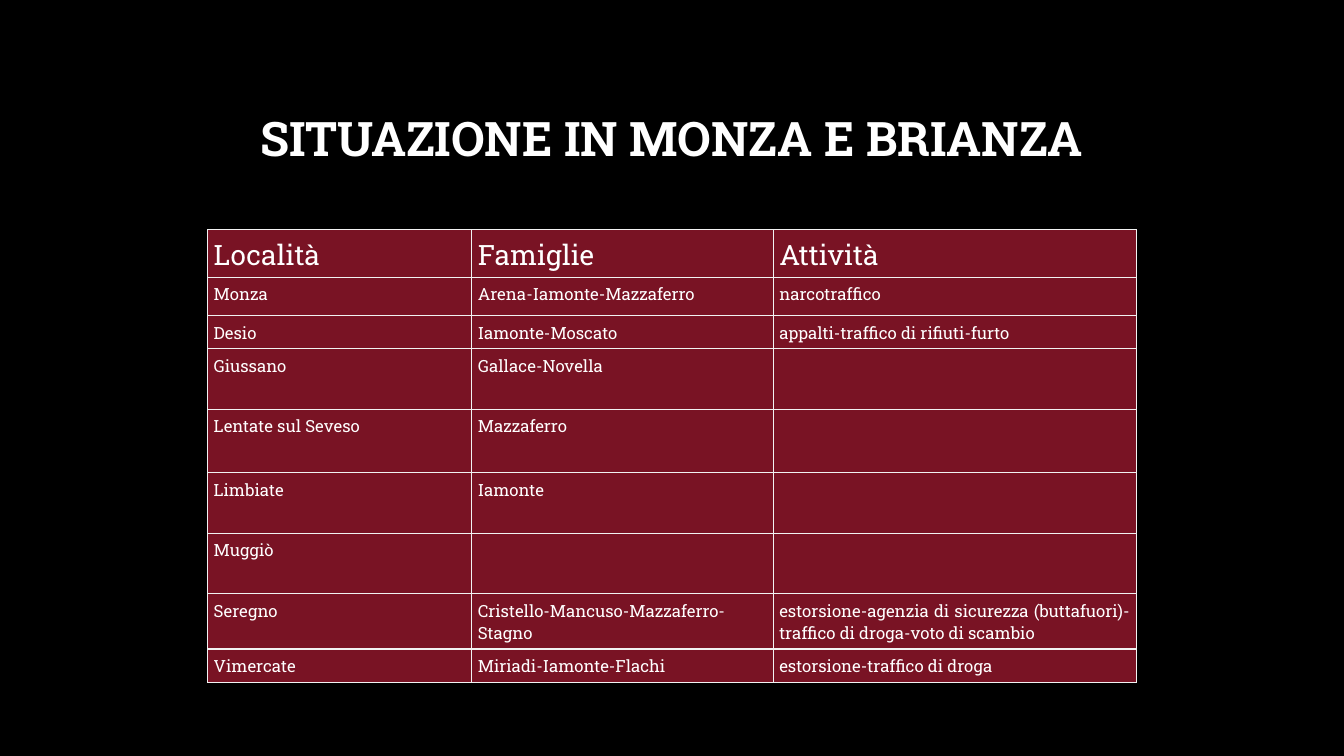
from lxml import etree
from pptx import Presentation
from pptx import util as u
from pptx.dml.color import RGBColor
from pptx.enum import text
from pptx.oxml.ns import qn

BLACK = RGBColor(0x00, 0x00, 0x00)
WHITE = RGBColor(0xFF, 0xFF, 0xFF)
WINE = RGBColor(0x79, 0x13, 0x24)
RULE = RGBColor(0xF2, 0xF2, 0xF2)
FONT = "Roboto Slab"

COLS = [2.62, 2.99, 3.6]
ROW_HEIGHTS = [0.47, 0.38, 0.33, 0.6, 0.63, 0.6, 0.6, 0.55, 0.33]
ROWS = [
    ("Località", "Famiglie", "Attività"),
    ("Monza", "Arena-Iamonte-Mazzaferro", "narcotraffico"),
    ("Desio", "Iamonte-Moscato", "appalti-traffico di rifiuti-furto"),
    ("Giussano", "Gallace-Novella", ""),
    ("Lentate sul Seveso", "Mazzaferro", ""),
    ("Limbiate", "Iamonte", ""),
    ("Muggiò", "", ""),
    ("Seregno", "Cristello-Mancuso-Mazzaferro-Stagno",
     "estorsione-agenzia di sicurezza (buttafuori)- traffico di droga-voto di scambio"),
    ("Vimercate", "Miriadi-Iamonte-Flachi", "estorsione-traffico di droga"),
]


def write(p, words, size, align, bold=False):
    p.alignment = align
    if not words:
        return
    r = p.add_run()
    r.text = words
    for name, value in {"name": FONT, "size": u.Pt(size), "bold": bold}.items():
        setattr(r.font, name, value)
    r.font.color.rgb = WHITE


def add_borders(cell, color, width):
    # Border lines must come before the fill in the cell properties
    tc_pr = cell._tc.get_or_add_tcPr()
    for i, side in enumerate(("a:lnL", "a:lnR", "a:lnT", "a:lnB")):
        ln = etree.Element(qn(side), w=str(u.Pt(width)))
        fill = etree.SubElement(ln, qn("a:solidFill"))
        etree.SubElement(fill, qn("a:srgbClr"), val=str(color))
        tc_pr.insert(i, ln)


def add_title(s, words, left, top, width, height):
    box = s.shapes.add_textbox(*map(u.Inches, (left, top, width, height)))
    tf = box.text_frame
    tf.word_wrap = True
    tf.vertical_anchor = text.MSO_ANCHOR.MIDDLE
    p = tf.paragraphs[0]
    p.line_spacing = 0.9
    write(p, words, 34, text.PP_ALIGN.CENTER, bold=True)


def add_families_table(s, left, top):
    frame = s.shapes.add_table(
        len(ROWS), len(COLS), u.Inches(left), u.Inches(top),
        u.Inches(sum(COLS)), u.Inches(sum(ROW_HEIGHTS)))
    table = frame.table
    for col, width in zip(table.columns, COLS):
        col.width = u.Inches(width)
    for i, (row, height) in enumerate(zip(table.rows, ROW_HEIGHTS)):
        row.height = u.Inches(height)
        for cell, words in zip(row.cells, ROWS[i]):
            for side in ("left", "right", "top", "bottom"):
                setattr(cell, f"margin_{side}", u.Inches(0.06))
            cell.fill.solid()
            cell.fill.fore_color.rgb = WINE
            add_borders(cell, RULE, 1)
            write(cell.text_frame.paragraphs[0], words,
                  12 if i else 20, text.PP_ALIGN.JUSTIFY)


def main():
    prs = Presentation()
    prs.slide_width, prs.slide_height = u.Inches(13.33), u.Inches(7.5)
    s = prs.slides.add_slide(prs.slide_layouts[6])
    s.background.fill.solid()
    s.background.fill.fore_color.rgb = BLACK
    add_title(s, "SITUAZIONE IN MONZA E BRIANZA", 1, 0.67, 11.32, 1.45)
    add_families_table(s, 2.06, 2.28)
    prs.save("out.pptx")


if __name__ == "__main__":
    main()
